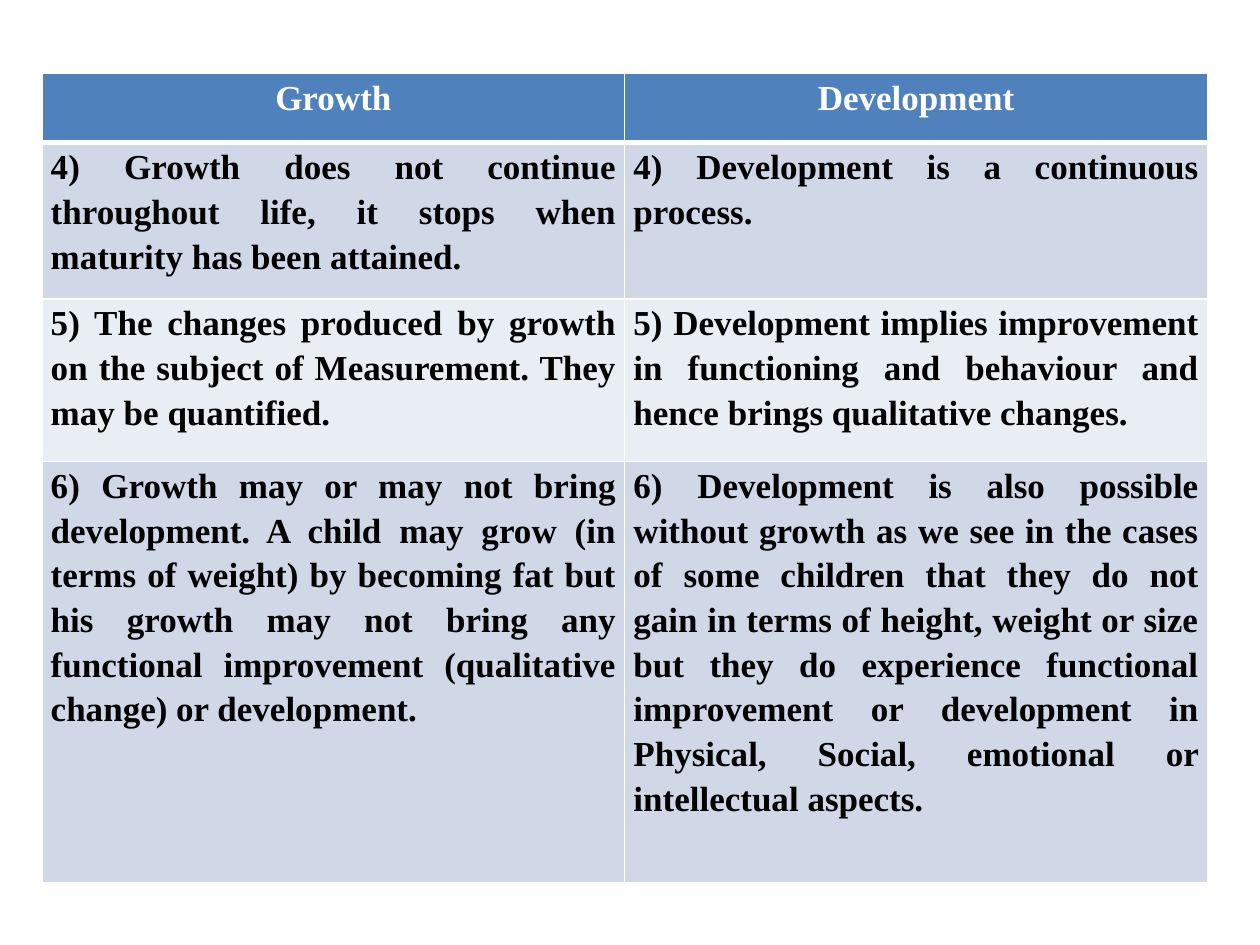
"""Build a slide whose table contrasts growth with development."""
from dataclasses import dataclass

import lxml.etree
import pptx
import pptx.dml.color
import pptx.enum.text
import pptx.oxml.ns
import pptx.table
import pptx.util

Pt = pptx.util.Pt
RGBColor = pptx.dml.color.RGBColor
Align = pptx.enum.text.PP_ALIGN

WHITE = RGBColor(0xFF, 0xFF, 0xFF)
BLACK = RGBColor(0x00, 0x00, 0x00)
HEADER_BLUE = RGBColor(0x4F, 0x81, 0xBD)
DARK_BAND = RGBColor(0xD0, 0xD8, 0xE8)
LIGHT_BAND = RGBColor(0xE9, 0xED, 0xF4)


@dataclass(frozen=True)
class RowStyle:
    fill: RGBColor
    ink: RGBColor
    alignment: Align
    bottom_border: float = 1


@dataclass(frozen=True)
class Comparison:
    growth: str
    development: str
    height: float
    style: RowStyle


HEADER = RowStyle(HEADER_BLUE, WHITE, Align.CENTER, 3)
DARK = RowStyle(DARK_BAND, BLACK, Align.JUSTIFY)
LIGHT = RowStyle(LIGHT_BAND, BLACK, Align.JUSTIFY)

COMPARISONS = [
    Comparison("Growth", "Development", 39.6, HEADER),
    Comparison(
        "4) Growth does not continue throughout life, it stops when maturity "
        "has been attained.",
        "4) Development is a continuous process.",
        89.2, DARK),
    Comparison(
        "5) The changes produced by growth on the subject of Measurement. "
        "They may be quantified.",
        "5) Development implies improvement in functioning and behaviour and "
        "hence brings qualitative changes.",
        93, LIGHT),
    Comparison(
        "6) Growth may or may not bring development. A child may grow (in "
        "terms of weight) by becoming fat but his growth may not bring any "
        "functional improvement (qualitative change) or development.",
        "6) Development is also possible without growth as we see in the cases "
        "of some children that they do not gain in terms of height, weight or "
        "size but they do experience functional improvement or development in "
        "Physical, Social, emotional or intellectual aspects.",
        240.4, DARK),
]


def draw_borders(cell: pptx.table._Cell, top: float, bottom: float) -> None:
    """Give the cell white borders, with top and bottom widths in points."""
    qn = pptx.oxml.ns.qn
    properties = cell._tc.get_or_add_tcPr()
    widths = {"a:lnL": 1, "a:lnR": 1, "a:lnT": top, "a:lnB": bottom}
    for position, (side, width) in enumerate(widths.items()):
        border = lxml.etree.Element(qn(side), w=str(Pt(width)))
        fill = lxml.etree.SubElement(border, qn("a:solidFill"))
        lxml.etree.SubElement(fill, qn("a:srgbClr"), val=str(WHITE))
        properties.insert(position, border)


def write_cell(cell: pptx.table._Cell, wording: str, style: RowStyle,
               top_border: float) -> None:
    """Fill, border and word one table cell."""
    cell.fill.solid()
    cell.fill.fore_color.rgb = style.fill
    cell.margin_left = cell.margin_right = Pt(5)
    cell.margin_top = cell.margin_bottom = Pt(0)
    cell.text = wording
    paragraph = cell.text_frame.paragraphs[0]
    paragraph.alignment = style.alignment
    paragraph.line_spacing = 1.15
    paragraph.space_after = Pt(10)
    paragraph.font.name = "Times New Roman"
    paragraph.font.size = Pt(20)
    paragraph.font.bold = True
    paragraph.font.color.rgb = style.ink
    draw_borders(cell, top_border, style.bottom_border)


def main() -> None:
    """Create and save the presentation."""
    presentation = pptx.Presentation()
    presentation.slide_width, presentation.slide_height = Pt(720), Pt(540)
    slide = presentation.slides.add_slide(presentation.slide_layouts[6])
    total_height = sum(comparison.height for comparison in COMPARISONS)
    table = slide.shapes.add_table(
        len(COMPARISONS), 2, Pt(24), Pt(42), Pt(666), Pt(total_height)).table
    top_border = 1
    for index, comparison in enumerate(COMPARISONS):
        table.rows[index].height = Pt(comparison.height)
        for column, wording in enumerate(
                (comparison.growth, comparison.development)):
            write_cell(table.cell(index, column), wording, comparison.style,
                       top_border)
        top_border = comparison.style.bottom_border
    presentation.save("out.pptx")


if __name__ == "__main__":
    main()
